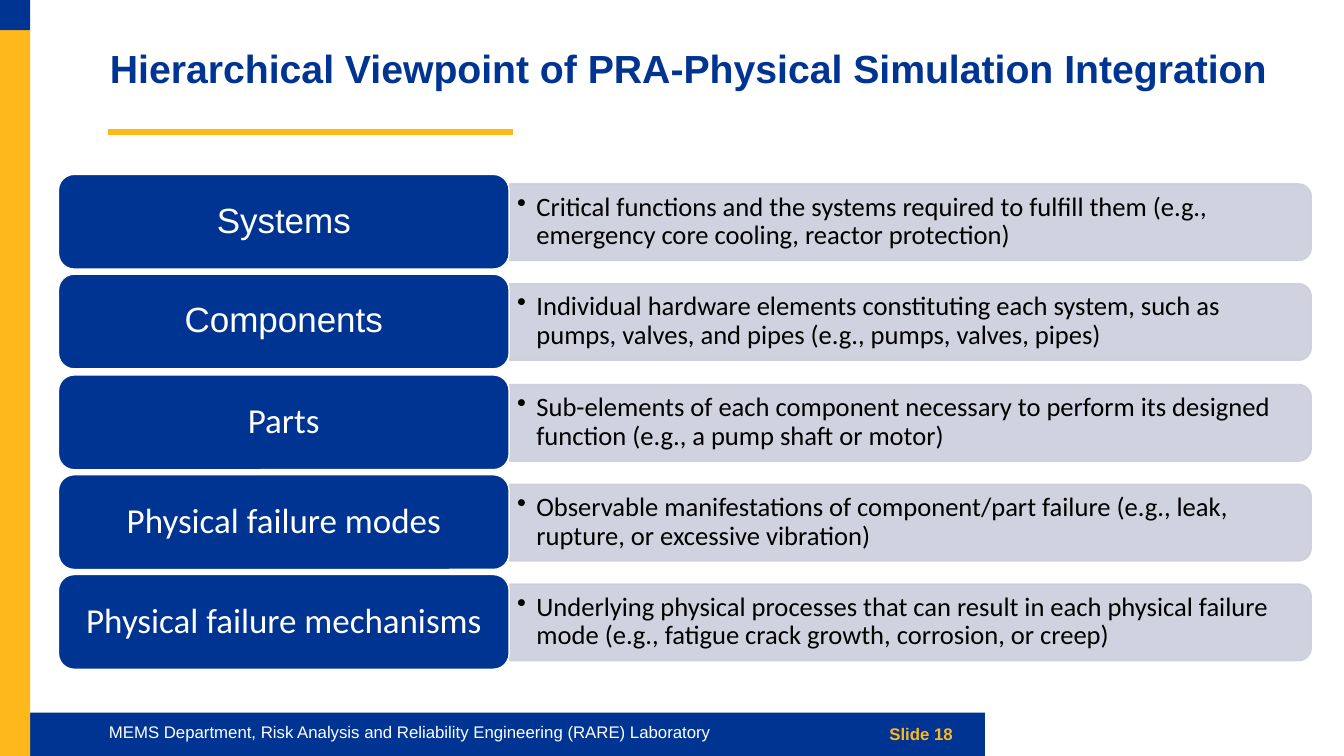
from pptx import Presentation
from pptx.dml.color import RGBColor
from pptx.enum.shapes import MSO_CONNECTOR as CONNECTOR, MSO_SHAPE as SHAPE
from pptx.enum.text import MSO_ANCHOR as ANCHOR, MSO_AUTO_SIZE as AUTO_SIZE, PP_ALIGN as ALIGN
from pptx.oxml.ns import qn
from pptx.util import Emu, Pt
from lxml.etree import SubElement

BLUE = RGBColor(0x00, 0x34, 0x93)
GOLD = RGBColor(0xFF, 0xB8, 0x1C)
LAVENDER = RGBColor(0xCC, 0xCE, 0xDC)
WHITE = RGBColor(0xFF, 0xFF, 0xFF)
BLACK = RGBColor(0x00, 0x00, 0x00)

LEVELS = [
    ("Systems", "Arial",
     "Critical functions and the systems required to fulfill them "
     "(e.g., emergency core cooling, reactor protection)"),
    ("Components", "Arial",
     "Individual hardware elements constituting each system, such as "
     "pumps, valves, and pipes (e.g., pumps, valves, pipes)"),
    ("Parts", "Calibri",
     "Sub-elements of each component necessary to perform its designed "
     "function (e.g., a pump shaft or motor)"),
    ("Physical failure modes", "Calibri",
     "Observable manifestations of component/part failure "
     "(e.g., leak, rupture, or excessive vibration)"),
    ("Physical failure mechanisms", "Calibri",
     "Underlying physical processes that can result in each physical failure "
     "mode (e.g., fatigue crack growth, corrosion, or creep)"),
]
FIRST_ROW_TOP = 173
ROW_PITCH = 99.3


def px(length):
    """Turn px (100 to the inch) into EMU."""
    return Emu(length * 9144)


class SlideBuilder:
    def __init__(self, presentation):
        self.slide = presentation.slides.add_slide(presentation.slide_layouts[5])

    def set_text(self, shape, text, size, color, font="Arial", bold=False,
                 align=ALIGN.LEFT, anchor=ANCHOR.MIDDLE, insets=(0, 0),
                 spacing=0.9, bullet_indent=0):
        frame = shape.text_frame
        frame.word_wrap = True
        frame.auto_size = AUTO_SIZE.NONE
        frame.vertical_anchor = anchor
        frame.margin_left = frame.margin_right = px(insets[0])
        frame.margin_top = frame.margin_bottom = px(insets[1])
        paragraph = frame.paragraphs[0]
        paragraph.text = text
        paragraph.alignment = align
        paragraph.line_spacing = spacing
        if bullet_indent:
            properties = paragraph._p.get_or_add_pPr()
            properties.set("marL", str(px(bullet_indent)))
            properties.set("indent", str(px(-bullet_indent)))
            SubElement(properties, qn("a:buChar"), char="•")
        paragraph.font.name = font
        paragraph.font.size = Pt(size)
        paragraph.font.bold = bold
        paragraph.font.color.rgb = color

    def title(self, text, left, top, width, height, **style):
        title = self.slide.shapes.title
        title.left, title.top = px(left), px(top)
        title.width, title.height = px(width), px(height)
        self.set_text(title, text, **style)

    def text(self, text, left, top, width, height, **style):
        box = self.slide.shapes.add_textbox(px(left), px(top), px(width), px(height))
        self.set_text(box, text, **style)

    def shape(self, kind, left, top, width, height, fill, line=None, alpha=None):
        shape = self.slide.shapes.add_shape(kind, px(left), px(top), px(width), px(height))
        shape.shadow.inherit = False
        shape.fill.solid()
        shape.fill.fore_color.rgb = fill
        if line is None:
            shape.line.fill.background()
        else:
            shape.line.color.rgb = line
            shape.line.width = Pt(1)
        if alpha is not None:
            for color in shape._element.spPr.iter(qn("a:srgbClr")):
                SubElement(color, qn("a:alpha"), val=str(alpha * 1000))
        return shape

    def rule(self, left, right, y, color, weight):
        line = self.slide.shapes.add_connector(
            CONNECTOR.STRAIGHT, px(left), px(y), px(right), px(y))
        line.line.color.rgb = color
        line.line.width = Pt(weight)
        SubElement(line._element.spPr, qn("a:effectLst"))

    def level(self, top, name, font, description):
        # Description bar, turned so that its rounded end faces right
        bar = self.shape(SHAPE.ROUND_2_SAME_RECTANGLE, 865, top - 350, 76, 795,
                         LAVENDER, LAVENDER, alpha=90)
        bar.rotation = 90
        self.text(description, 505, top + 13, 791, 68, size=19, color=BLACK,
                  font="Calibri", insets=(8, 4), bullet_indent=19)
        # Level name
        label = self.shape(SHAPE.ROUNDED_RECTANGLE, 58, top, 447, 94, BLUE, WHITE)
        self.set_text(label, name, size=25, color=WHITE, font=font,
                      align=ALIGN.CENTER, insets=(15, 10))


def main():
    presentation = Presentation()
    presentation.slide_width, presentation.slide_height = px(1333), px(750)
    builder = SlideBuilder(presentation)

    # Frame: footer bar, title rule and side stripe
    builder.shape(SHAPE.RECTANGLE, 30, 707, 947, 43, BLUE)
    builder.rule(107, 509, 131, GOLD, 4)
    builder.shape(SHAPE.RECTANGLE, 0, 30, 30, 720, GOLD)
    builder.shape(SHAPE.RECTANGLE, 0, 0, 30, 30, BLUE)

    # Title and footer text
    builder.title("Hierarchical Viewpoint of PRA-Physical Simulation Integration",
                  109, 52, 1176, 78, size=28, color=BLUE, bold=True,
                  anchor=ANCHOR.TOP, insets=(0, 5), spacing=0.7)
    builder.text("MEMS Department, Risk Analysis and Reliability Engineering (RARE) Laboratory",
                 108, 707, 869, 41, size=12, color=WHITE)
    builder.text("Slide 18", 655, 708, 300, 40, size=12, color=GOLD, bold=True,
                 align=ALIGN.RIGHT, insets=(10, 5), spacing=1.0)

    # Hierarchy levels
    for row, (name, font, description) in enumerate(LEVELS):
        builder.level(FIRST_ROW_TOP + round(row * ROW_PITCH), name, font, description)

    presentation.save("out.pptx")


if __name__ == "__main__":
    main()
